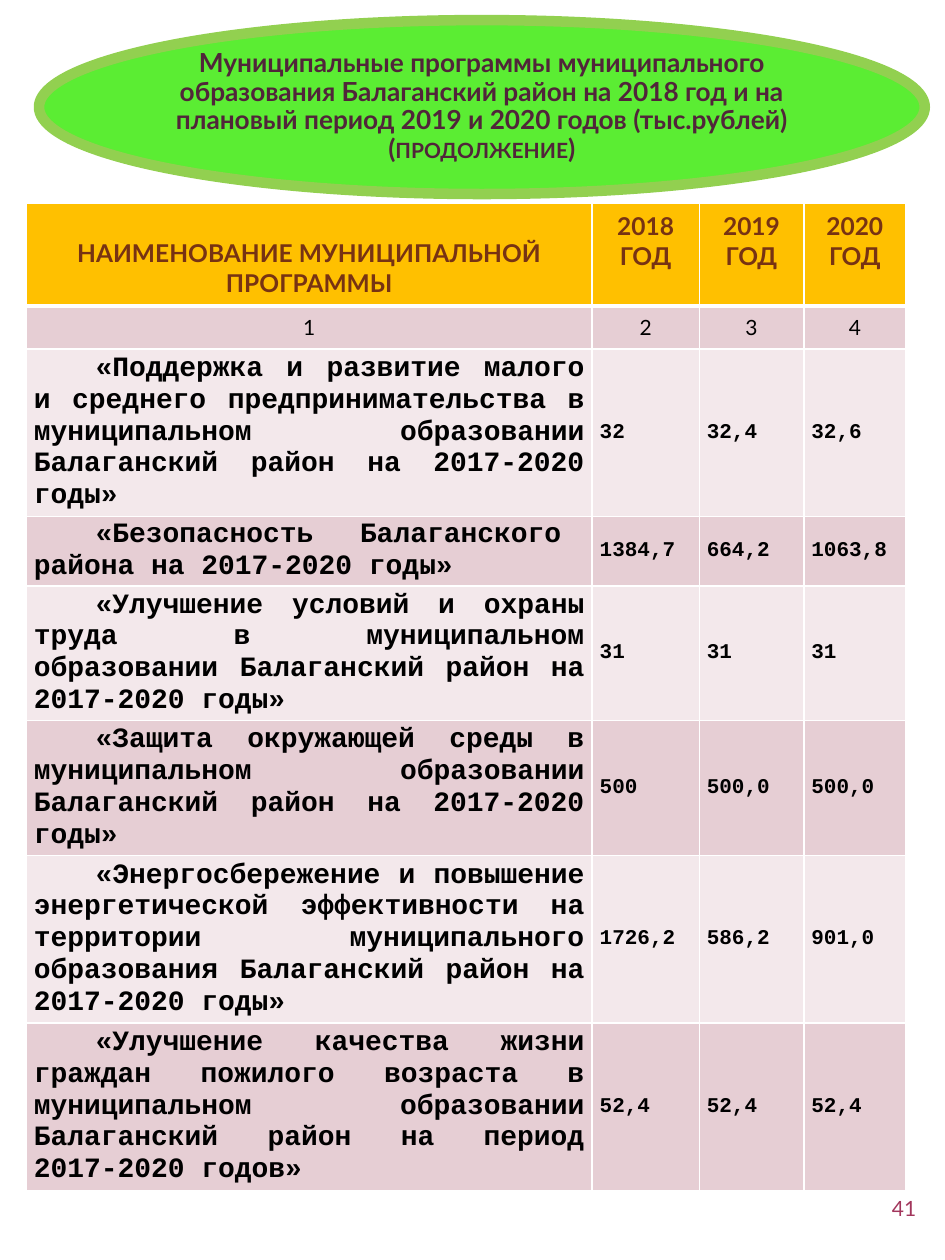
from dataclasses import dataclass

from lxml.etree import SubElement
from pptx import Presentation
from pptx.dml.color import RGBColor
from pptx.enum.shapes import MSO_SHAPE
from pptx.enum.text import MSO_ANCHOR as Anchor, PP_ALIGN as Align
from pptx.oxml.ns import qn
from pptx.util import Inches, Pt


@dataclass(frozen=True)
class Theme:
    sans: str = "Lato"
    mono: str = "Courier New"
    title: str = "51253A"
    heading: str = "773313"
    body: str = "000000"
    page: str = "A2365C"
    oval: str = "5BED33"
    oval_line: str = "92D050"
    header: str = "FFC000"
    dark_band: str = "E6CED4"
    light_band: str = "F3E8EB"
    border: str = "FFFFFF"
    title_size: int = 15
    program_size: int = 16
    heading_size: int = 14
    small_size: int = 12


theme = Theme()


def write_text(paragraph, text, *, size, color, font=theme.sans, bold=False, align=Align.CENTER):
    paragraph.alignment = align
    run = paragraph.add_run()
    run.text = text
    run.font.name = font
    run.font.size = Pt(size)
    run.font.bold = bold
    run.font.color.rgb = RGBColor.from_string(color)


def style_cell(cell, fill, top, bottom):
    properties = cell._tc.get_or_add_tcPr()
    for side, width in (("L", 1), ("R", 1), ("T", top), ("B", bottom)):
        line = SubElement(properties, qn(f"a:ln{side}"), w=str(Pt(width)))
        SubElement(SubElement(line, qn("a:solidFill")), qn("a:srgbClr"), val=theme.border)
    cell.fill.solid()
    cell.fill.fore_color.rgb = RGBColor.from_string(fill)


presentation = Presentation()
presentation.slide_width = Inches(7.5)
presentation.slide_height = Inches(10)
slide = presentation.slides.add_slide(presentation.slide_layouts[6])

headings = ("НАИМЕНОВАНИЕ МУНИЦИПАЛЬНОЙ ПРОГРАММЫ", "2018 ГОД", "2019 ГОД", "2020 ГОД")
programs = (
    ("«Поддержка и развитие малого и среднего предпринимательства в муниципальном образовании "
     "Балаганский район на 2017-2020 годы»", "32", "32,4", "32,6"),
    ("«Безопасность  Балаганского  района на 2017-2020 годы»", "1384,7", "664,2", "1063,8"),
    ("«Улучшение условий и охраны труда в муниципальном образовании "
     "Балаганский район на 2017-2020 годы»", "31", "31", "31"),
    ("«Защита окружающей среды в муниципальном образовании "
     "Балаганский район на 2017-2020 годы»", "500", "500,0", "500,0"),
    ("«Энергосбережение и повышение энергетической эффективности на территории  "
     "муниципального образования Балаганский район на 2017-2020 годы»", "1726,2", "586,2", "901,0"),
    ("«Улучшение качества жизни граждан пожилого возраста в муниципальном образовании "
     "Балаганский район на период 2017-2020 годов»", "52,4", "52,4", "52,4"),
)
rows = (headings, ("1", "2", "3", "4"), *programs)
column_widths = (4.49, 0.85, 0.83, 0.81)
row_heights = (0.82, 0.33, 1.33, 0.55, 1.07, 1.07, 1.33, 1.33)

table = slide.shapes.add_table(
    len(rows), len(column_widths), Inches(0.21), Inches(1.61),
    Inches(sum(column_widths)), Inches(sum(row_heights)),
).table
for column, width in zip(table.columns, column_widths):
    column.width = Inches(width)
for row, height in zip(table.rows, row_heights):
    row.height = Inches(height)

for row_index, values in enumerate(rows):
    is_header = row_index == 0
    is_program = row_index > 1
    band = theme.dark_band if row_index % 2 else theme.light_band
    for column_index, value in enumerate(values):
        cell = table.cell(row_index, column_index)
        style_cell(cell, theme.header if is_header else band,
                   top=3 if row_index == 1 else 1, bottom=3 if is_header else 1)
        cell.margin_left = cell.margin_right = Inches(0.06 if is_program else 0.07)
        cell.margin_top = cell.margin_bottom = Inches(0 if is_program else 0.07)
        paragraph = cell.text_frame.paragraphs[0]
        is_name = column_index == 0
        if is_header:
            cell.vertical_anchor = Anchor.BOTTOM if is_name else Anchor.TOP
            write_text(paragraph, value, size=theme.heading_size, color=theme.heading, bold=True)
        elif is_program:
            cell.vertical_anchor = Anchor.MIDDLE
            write_text(paragraph, value, size=theme.program_size if is_name else theme.small_size,
                       color=theme.body, font=theme.mono, bold=True, align=Align.JUSTIFY)
            if is_name:
                paragraph._p.get_or_add_pPr().set("indent", str(Inches(0.49)))
        else:
            write_text(paragraph, value, size=theme.small_size, color=theme.body)

oval = slide.shapes.add_shape(MSO_SHAPE.OVAL, Inches(0.31), Inches(0.16), Inches(7.03), Inches(1.38))
oval.shadow.inherit = False
oval.fill.solid()
oval.fill.fore_color.rgb = RGBColor.from_string(theme.oval)
oval.line.color.rgb = RGBColor.from_string(theme.oval_line)
oval.line.width = Pt(6)
title_frame = oval.text_frame
title_frame.word_wrap = True
title_frame.vertical_anchor = Anchor.MIDDLE
title_frame.margin_left = title_frame.margin_right = Inches(0)
title_frame.margin_top = title_frame.margin_bottom = Inches(0)
title_paragraph = title_frame.paragraphs[0]
title_paragraph.line_spacing = 0.9
for text, size in (
    ("Муниципальные программы муниципального образования Балаганский район на 2018 год "
     "и на плановый период 2019 и 2020 годов (тыс.рублей)(", theme.title_size),
    ("ПРОДОЛЖЕНИЕ", theme.small_size),
    (")", theme.title_size),
):
    write_text(title_paragraph, text, size=size, color=theme.title, bold=True)

page_number = slide.shapes.add_textbox(Inches(6.75), Inches(9.44), Inches(0.62), Inches(0.36))
page_number.text_frame.word_wrap = True
write_text(page_number.text_frame.paragraphs[0], "41", size=theme.small_size,
           color=theme.page, align=Align.RIGHT)

presentation.save("out.pptx")
